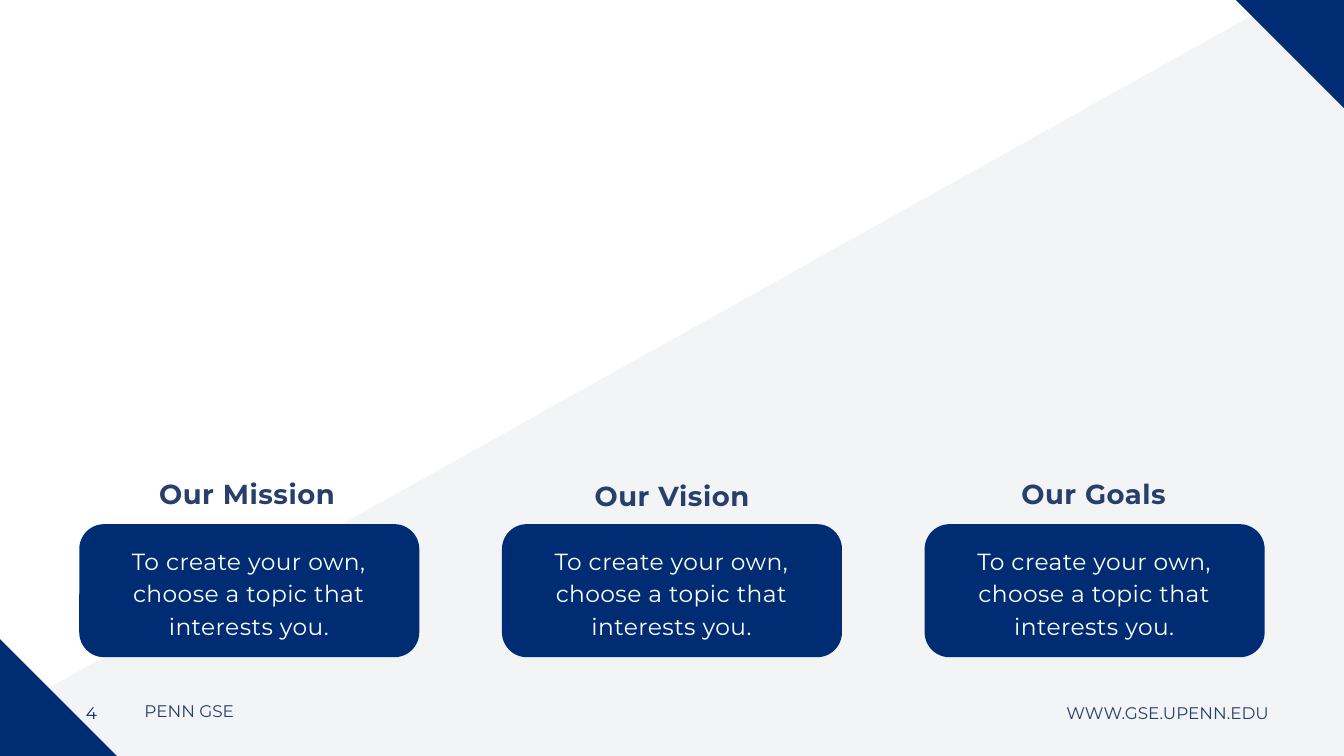
from lxml import etree
from pptx import Presentation
from pptx.dml.color import RGBColor
from pptx.enum.shapes import MSO_SHAPE as SHAPE
from pptx.enum.text import PP_ALIGN as ALIGN
from pptx.oxml.ns import qn
from pptx.util import Inches, Pt

COLORS = {"tint": "002856", "navy": "002C73", "ink": "263F6B", "white": "FFFFFF"}
FONT = "Montserrat"

# Content
BODY = "To create your own, choose a topic that interests you."
CARDS = [  # heading, heading left, heading top, body
    ("Our Mission", 2.27, 7.11, BODY),
    ("Our Vision", 8.75, 7.13, BODY),
    ("Our Goals", 15.1, 7.11, BODY),
]
FOOTERS = [  # text, box, alignment, colour, letter spacing
    ("PENN GSE", (2.15, 10.38, 3.05, 0.34), ALIGN.LEFT, "ink", 0),
    ("WWW.GSE.UPENN.EDU", (14.49, 10.41, 4.39, 0.34), ALIGN.RIGHT, "ink", 0),
    ("4", (1.28, 10.41, 0.63, 0.33), ALIGN.JUSTIFY, "navy", 5.4),
]
BACKDROP = [  # box, rotation, colour, opacity in percent
    ((-1.26, 4.23, 28.2, 10.48), 330.8, "tint", 5),
    ((-3.08, 9.89, 5.79, 2.72), 45, "navy", 100),
    ((17.32, -1.46, 5.79, 2.72), 45, "navy", 100),
]

# Card grid
CARD_LEFT, CARD_TOP, CARD_W, CARD_H = 1.18, 7.8, 5.06, 1.98
CARD_STEP, CORNER = 6.29, 0.37
BODY_DX, BODY_DY, BODY_W, BODY_H = 0.66, 0.22, 3.73, 1.48

HEADING = {"size": Pt(29.4), "bold": True}
BODY_TEXT = {"size": Pt(25)}
FOOTER = {"size": Pt(18)}


def rgb(name):
    return RGBColor.from_string(COLORS[name])


def add_block(slide, kind, box, color, opacity=100):
    sp = slide.shapes.add_shape(kind, *map(Inches, box))
    sp.shadow.inherit = False
    sp.line.fill.background()
    sp.fill.solid()
    sp.fill.fore_color.rgb = rgb(color)
    if opacity < 100:
        clr = sp.fill._xPr.find(qn("a:solidFill"))[0]
        etree.SubElement(clr, qn("a:alpha")).set("val", str(opacity * 1000))
    return sp


def add_text(slide, text, box, fmt, color, align, line, spacing=0, inset=True):
    tf = slide.shapes.add_textbox(*map(Inches, box)).text_frame
    tf.word_wrap = True
    if not inset:
        tf.margin_left = tf.margin_right = tf.margin_top = tf.margin_bottom = 0
    p = tf.paragraphs[0]
    p.alignment, p.line_spacing = align, line
    r = p.add_run()
    r.text = text
    for name, value in {"name": FONT, **fmt}.items():
        setattr(r.font, name, value)
    r.font.color.rgb = rgb(color)
    if spacing:
        r._r.get_or_add_rPr().set("spc", str(round(spacing * 100)))


prs = Presentation()
prs.slide_width, prs.slide_height = Inches(20), Inches(11.25)
s = prs.slides.add_slide(prs.slide_layouts[6])

# Diagonal tint and corner wedges
for box, angle, color, opacity in BACKDROP:
    add_block(s, SHAPE.RECTANGLE, box, color, opacity).rotation = angle

# Footer
for text, box, align, color, spacing in FOOTERS:
    add_text(s, text, box, FOOTER, color, align, Pt(25.2), spacing, inset=False)

# Cards with headings
for i, (heading, head_left, head_top, body) in enumerate(CARDS):
    left = CARD_LEFT + i * CARD_STEP
    add_text(s, heading, (head_left, head_top, 2.89, 0.56), HEADING, "ink",
             ALIGN.LEFT, 0.9, 0.6)
    card = add_block(s, SHAPE.ROUNDED_RECTANGLE,
                     (left, CARD_TOP, CARD_W, CARD_H), "navy")
    card.adjustments[0] = CORNER / CARD_H
    add_text(s, body, (left + BODY_DX, CARD_TOP + BODY_DY, BODY_W, BODY_H),
             BODY_TEXT, "white", ALIGN.CENTER, Pt(35), 0.5)

prs.save("out.pptx")
